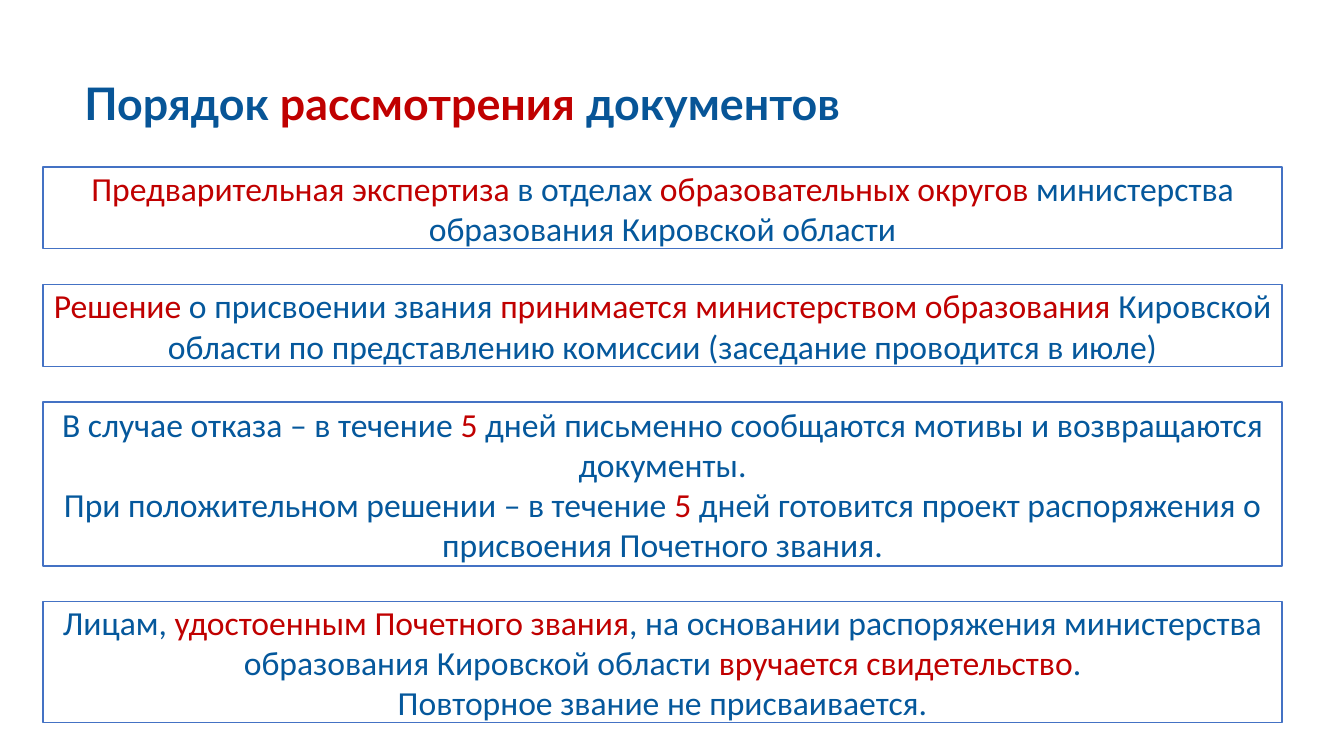
from pptx import Presentation
from pptx.dml.color import RGBColor
from pptx.enum.shapes import MSO_SHAPE
from pptx.enum.text import MSO_ANCHOR, PP_ALIGN
from pptx.util import Pt

PX = 9525
RED, BLUE, NAVY, EDGE, WHITE = "C00000", "05589C", "075597", "4472C4", "FFFFFF"
MARK = "|"

TITLE = "Порядок |рассмотрения| документов"
STEPS = [
    (78, ["|Предварительная экспертиза |в отделах |образовательных округов "
          "|министерства образования Кировской области"]),
    (78, ["|Решение| о присвоении звания |принимается министерством образования "
          "|Кировской области по представлению комиссии (заседание проводится в июле)"]),
    (156, ["В случае отказа – в течение |5| дней письменно сообщаются мотивы "
           "и возвращаются документы.",
           "При положительном решении – в течение |5| дней готовится проект "
           "распоряжения о присвоения Почетного звания."]),
    (115, ["Лицам, |удостоенным Почетного звания|, на основании распоряжения "
           "министерства образования Кировской области |вручается свидетельство|.",
           "Повторное звание не присваивается."]),
]
LEFT, TOP, WIDTH, GAP = 41, 159, 1180, 34


def color(code):
    return RGBColor.from_string(code)


def write(para, text, font, size, base, bold=False):
    for i, part in enumerate(text.split(MARK)):
        if part:
            run = para.add_run()
            run.text = part
            run.font.name = font
            run.font.size = Pt(size)
            run.font.bold = bold
            run.font.color.rgb = color(RED if i % 2 else base)


def add_title(slide):
    box = slide.shapes.add_textbox(71 * PX, 56 * PX, 799 * PX, 90 * PX)
    frame = box.text_frame
    frame.word_wrap = True
    frame.vertical_anchor = MSO_ANCHOR.MIDDLE
    para = frame.paragraphs[0]
    para.line_spacing = 0.9
    write(para, TITLE, "Lato", 32, NAVY, True)


def add_step(slide, top, height, lines):
    box = slide.shapes.add_shape(
        MSO_SHAPE.RECTANGLE, LEFT * PX, top * PX, WIDTH * PX, height * PX)
    box.shadow.inherit = False
    box.fill.solid()
    box.fill.fore_color.rgb = color(WHITE)
    box.line.color.rgb = color(EDGE)
    box.line.width = Pt(1)
    frame = box.text_frame
    frame.word_wrap = True
    frame.vertical_anchor = MSO_ANCHOR.MIDDLE
    for i, line in enumerate(lines):
        para = frame.add_paragraph() if i else frame.paragraphs[0]
        para.alignment = PP_ALIGN.CENTER
        write(para, line, "Calibri", 24, BLUE)


def main():
    deck = Presentation()
    deck.slide_width = 1280 * PX
    deck.slide_height = 720 * PX
    slide = deck.slides.add_slide(deck.slide_layouts[6])
    add_title(slide)
    top = TOP
    for height, lines in STEPS:
        add_step(slide, top, height, lines)
        top += height + GAP
    deck.save("out.pptx")


if __name__ == "__main__":
    main()
